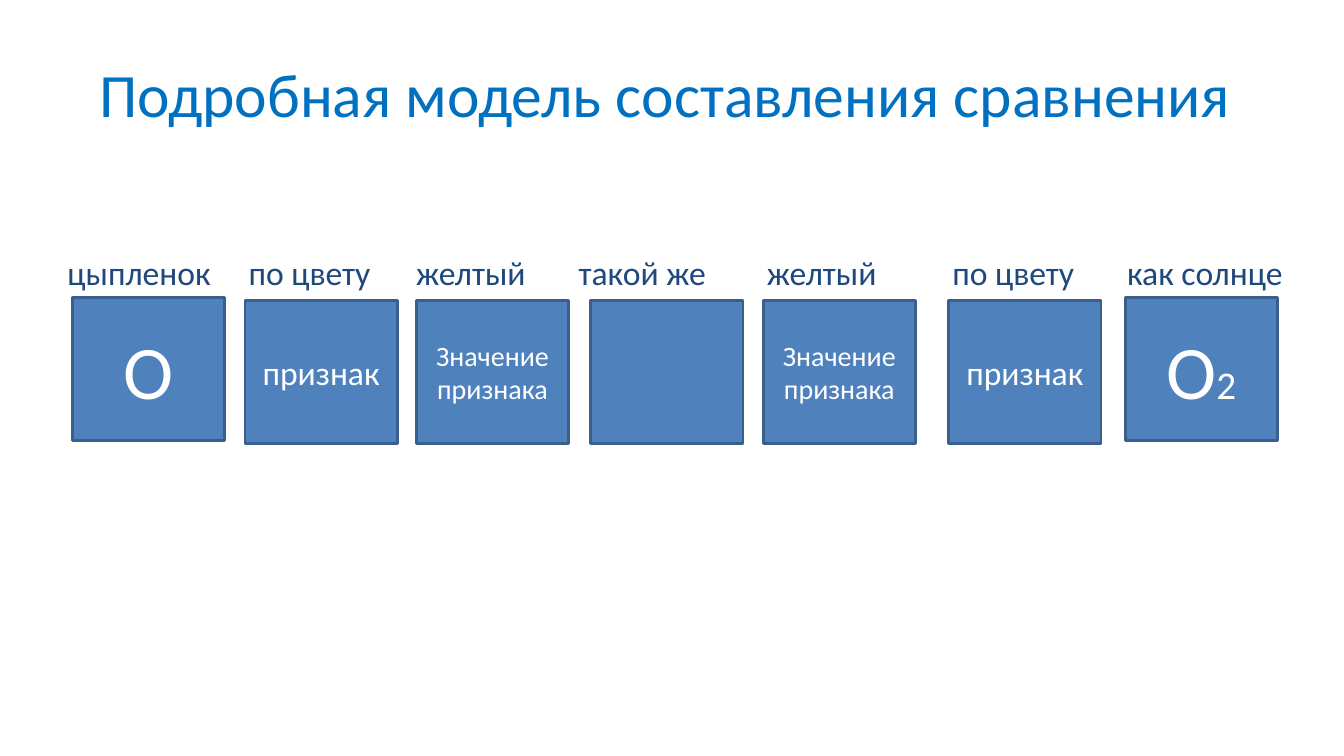
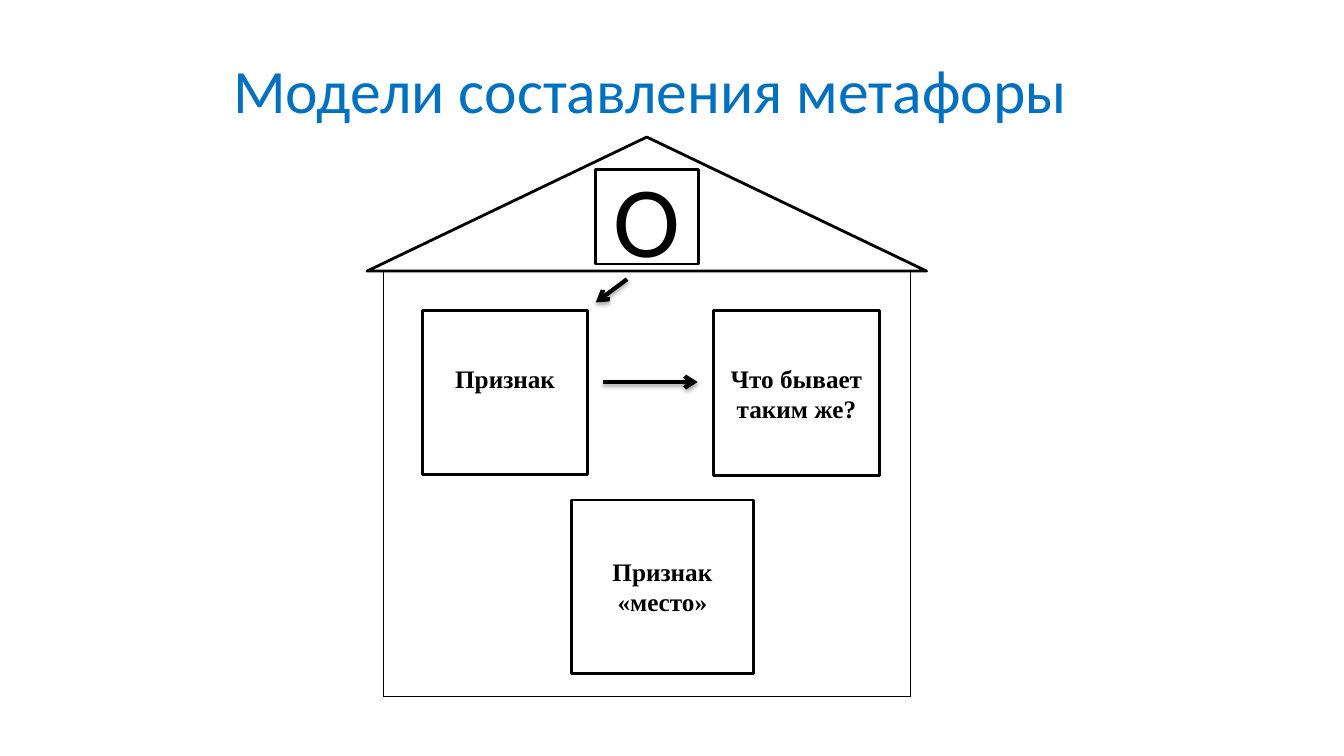
"""Builds two slides with models for composing a comparison and a metaphor."""
import pptx
import pptx.dml.color
import pptx.enum.shapes
import pptx.enum.text
import pptx.oxml
import pptx.oxml.ns
import pptx.util

Inches, Pt = pptx.util.Inches, pptx.util.Pt
RGBColor = pptx.dml.color.RGBColor
SHAPE = pptx.enum.shapes.MSO_SHAPE
ANCHOR = pptx.enum.text.MSO_ANCHOR
ALIGN = pptx.enum.text.PP_ALIGN

TITLE_BLUE = RGBColor(0x00, 0x70, 0xC0)
LABEL_BLUE = RGBColor(0x1F, 0x49, 0x7D)
CARD_BLUE = RGBColor(0x4F, 0x81, 0xBD)
CARD_EDGE = RGBColor(0x3A, 0x5F, 0x8C)
WHITE = RGBColor(0xFF, 0xFF, 0xFF)
BLACK = RGBColor(0x00, 0x00, 0x00)
SANS, SERIF = "Calibri", "Times New Roman"

CARD_W, CARD_H = 1.51, 1.42
LABEL_W, LABEL_H, LABEL_TOP = 2, 0.5, 2.45
CARDS = [
    ("цыпленок", 1.38, 0.72, 2.95, [("О", 54)]),
    ("по цвету", 3.07, 2.43, 2.98, [("признак", 24)]),
    ("желтый", 4.67, 4.13, 2.98, [("Значение признака", 20)]),
    ("такой же", 6.37, 5.86, 2.98, []),
    ("желтый", 8.15, 7.57, 2.98, [("Значение признака", 20)]),
    ("по цвету", 10.05, 9.41, 2.98, [("признак", 24)]),
    ("как солнце", 11.95, 11.16, 2.95, [("О", 54), ("2", 28)]),
]

HOUSE = (3.8, 2.69, 5.23, 4.22)
ROOF = (3.64, 1.36, 5.55, 1.33)
ATTIC = (5.91, 1.68, 1.02, 0.94)
ROOMS = [
    ("Признак", (4.19, 3.08, 1.64, 1.63), 0.32),
    ("Что бывает таким же?", (7.08, 3.08, 1.64, 1.64), 0.05),
    ("Признак «место»", (5.67, 4.96, 1.8, 1.72), 0.05),
]
ARROWS = [(6.22, 2.77, 5.91, 3), (5.98, 3.79, 6.92, 3.79)]

NS = pptx.oxml.ns.nsdecls("a")
ARROWHEAD = f'<a:tailEnd {NS} type="arrow"/>'
SHADOW = (
    f'<a:effectLst {NS}><a:outerShdw blurRad="{Pt(3.1)}" dist="{Pt(1.8)}" '
    'dir="5400000" rotWithShape="0"><a:srgbClr val="000000">'
    '<a:alpha val="35000"/></a:srgbClr></a:outerShdw></a:effectLst>'
)


def inches(*lengths):
    return [Inches(n) for n in lengths]


def write(shape, runs, color, font=SANS, bold=False):
    tf = shape.text_frame
    tf.word_wrap = True
    tf.vertical_anchor = ANCHOR.MIDDLE
    p = tf.paragraphs[0]
    p.alignment = ALIGN.CENTER
    for text, size in runs:
        r = p.add_run()
        r.text = text
        r.font.name, r.font.size, r.font.bold = font, Pt(size), bold
        r.font.color.rgb = color
    return tf


def add_text(s, box, text, size, color):
    return write(s.shapes.add_textbox(*inches(*box)), [(text, size)], color)


def add_box(s, box, fill, edge, kind=SHAPE.RECTANGLE):
    sp = s.shapes.add_shape(kind, *inches(*box))
    sp.shadow.inherit = False
    sp.fill.solid()
    sp.fill.fore_color.rgb = fill
    sp.line.color.rgb = edge
    sp.line.width = Pt(2)
    return sp


def add_house(s, box):
    table = s.shapes.add_table(1, 1, *inches(*box)).table
    table.first_row = table.horz_banding = False
    cell = table.cell(0, 0)
    borders = cell._tc.get_or_add_tcPr()
    for side in "LRTB":
        borders.append(pptx.oxml.parse_xml(
            f'<a:ln{side} {NS} w="{Pt(1)}"><a:solidFill>'
            f'<a:srgbClr val="{BLACK}"/></a:solidFill></a:ln{side}>'))
    cell.fill.background()


def add_arrow(s, ends):
    line = s.shapes.add_connector(
        pptx.enum.shapes.MSO_CONNECTOR.STRAIGHT, *inches(*ends))
    line.line.color.rgb = BLACK
    line.line.width = Pt(3)
    line.line._get_or_add_ln().append(pptx.oxml.parse_xml(ARROWHEAD))
    line._element.spPr.append(pptx.oxml.parse_xml(SHADOW))


def add_slide(prs, title, box):
    s = prs.slides.add_slide(prs.slide_layouts[6])
    add_text(s, box, title, 44, TITLE_BLUE)
    return s


def comparison_slide(prs):
    s = add_slide(prs, "Подробная модель составления сравнения ", (0.67, 0.3, 12, 1.25))
    for label, center, left, top, runs in CARDS:
        label_box = (center - LABEL_W / 2, LABEL_TOP, LABEL_W, LABEL_H)
        add_text(s, label_box, label, 24, LABEL_BLUE)
        card = add_box(s, (left, top, CARD_W, CARD_H), CARD_BLUE, CARD_EDGE)
        write(card, runs, WHITE)


def metaphor_slide(prs):
    s = add_slide(prs, "Модели составления метафоры", (1.95, 0.26, 9, 1.25))
    add_house(s, HOUSE)
    add_box(s, ROOF, WHITE, BLACK, SHAPE.ISOSCELES_TRIANGLE)
    write(add_box(s, ATTIC, WHITE, BLACK), [("О", 72)], BLACK)
    for text, box, bottom in ROOMS:
        tf = write(add_box(s, box, WHITE, BLACK), [(text, 18)], BLACK, SERIF, True)
        tf.margin_bottom = Inches(bottom)
    for ends in ARROWS:
        add_arrow(s, ends)


def main():
    prs = pptx.Presentation()
    prs.slide_width, prs.slide_height = inches(13.33, 7.5)
    comparison_slide(prs)
    metaphor_slide(prs)
    prs.save("out.pptx")


if __name__ == "__main__":
    main()
